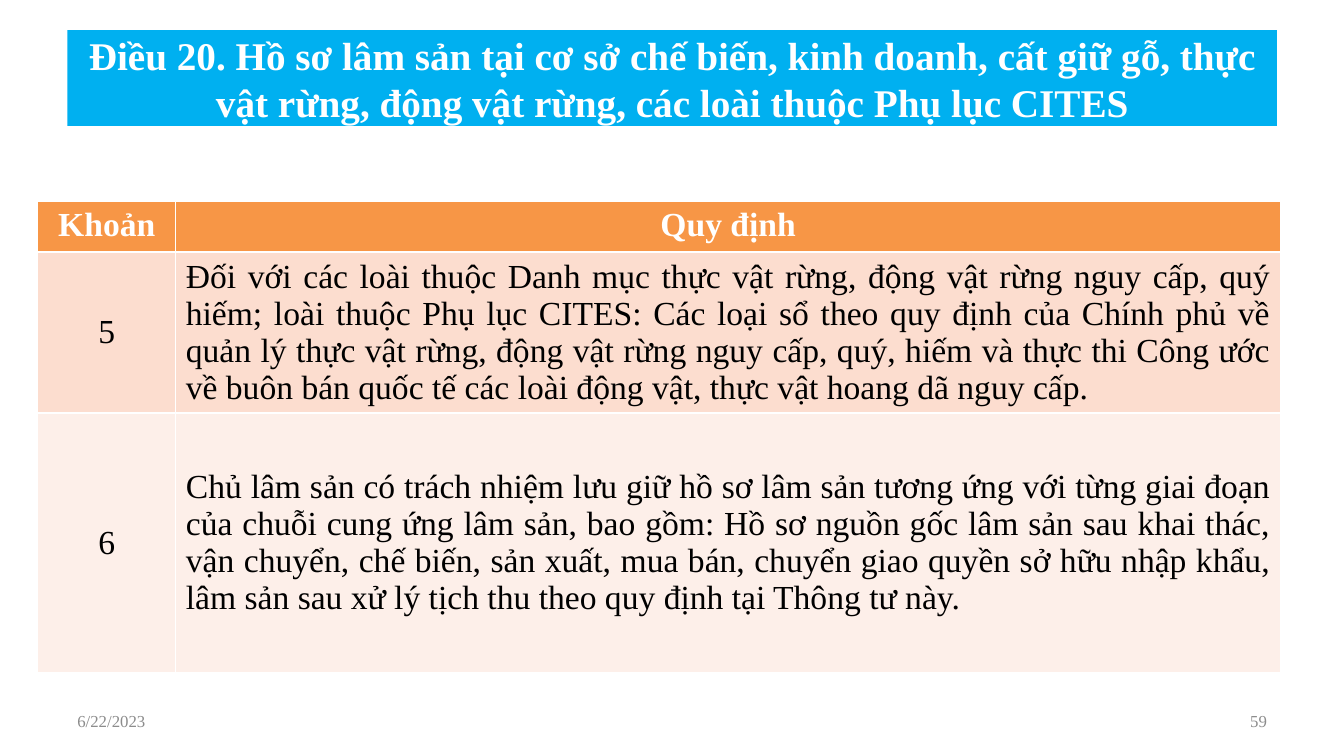
from typing import NamedTuple

from pptx import Presentation
from pptx import util as u
from pptx.dml.color import RGBColor
from pptx.enum import text

FONT = "Times New Roman"
WHITE = RGBColor(0xFF, 0xFF, 0xFF)
BLACK = RGBColor(0x00, 0x00, 0x00)
GREY = RGBColor(0x8C, 0x8C, 0x8C)
BLUE = RGBColor(0x00, 0xB0, 0xF0)
ORANGE = RGBColor(0xF7, 0x96, 0x46)
PEACH = RGBColor(0xFC, 0xDD, 0xCF)
PALE_PEACH = RGBColor(0xFD, 0xEF, 0xE9)

LEFT, CENTER, RIGHT, JUSTIFY = (
    text.PP_ALIGN.LEFT, text.PP_ALIGN.CENTER, text.PP_ALIGN.RIGHT, text.PP_ALIGN.JUSTIFY)
TOP, MIDDLE = text.MSO_ANCHOR.TOP, text.MSO_ANCHOR.MIDDLE


class Clause(NamedTuple):
    number: str
    rule: str
    height: float
    fill: RGBColor
    color: RGBColor = BLACK
    bold: bool = False
    rule_align: text.PP_ALIGN = JUSTIFY
    anchor: text.MSO_ANCHOR = MIDDLE


class FooterItem(NamedTuple):
    content: str
    left: float
    align: text.PP_ALIGN


TITLE = ("Điều 20. Hồ sơ lâm sản tại cơ sở chế biến, kinh doanh, cất giữ gỗ, "
         "thực vật rừng, động vật rừng, các loài thuộc Phụ lục CITES")
CLAUSES = [
    Clause("Khoản", "Quy định", 1.27, ORANGE, WHITE, True, CENTER, TOP),
    Clause("5", "Đối với các loài thuộc Danh mục thực vật rừng, động vật rừng nguy cấp, "
           "quý hiếm; loài thuộc Phụ lục CITES: Các loại sổ theo quy định của Chính phủ "
           "về quản lý thực vật rừng, động vật rừng nguy cấp, quý, hiếm và thực thi "
           "Công ước về buôn bán quốc tế các loài động vật, thực vật hoang dã nguy cấp.",
           4.06, PEACH),
    Clause("6", "Chủ lâm sản có trách nhiệm lưu giữ hồ sơ lâm sản tương ứng với từng "
           "giai đoạn của chuỗi cung ứng lâm sản, bao gồm: Hồ sơ nguồn gốc lâm sản sau "
           "khai thác, vận chuyển, chế biến, sản xuất, mua bán, chuyển giao quyền sở hữu "
           "nhập khẩu, lâm sản sau xử lý tịch thu theo quy định tại Thông tư này.",
           6.53, PALE_PEACH),
]
COLUMN_WIDTHS = (3.48, 27.84)
FOOTER = [FooterItem("6/22/2023", 1.7, LEFT), FooterItem("59", 24.28, RIGHT)]


def write(frame, content: str, size: float, color: RGBColor,
          align: text.PP_ALIGN, bold: bool = False) -> None:
    paragraph = frame.paragraphs[0]
    paragraph.alignment = align
    run = paragraph.add_run()
    run.text = content
    run.font.name = FONT
    run.font.size = u.Pt(size)
    run.font.bold = bold
    run.font.color.rgb = color


def add_heading(slide) -> None:
    heading = slide.shapes.title
    heading.left, heading.top = u.Cm(1.7), u.Cm(0.76)
    heading.width, heading.height = u.Cm(30.48), u.Cm(2.41)
    heading.fill.solid()
    heading.fill.fore_color.rgb = BLUE
    frame = heading.text_frame
    frame.auto_size = text.MSO_AUTO_SIZE.NONE
    frame.vertical_anchor = MIDDLE
    write(frame, TITLE, 28, WHITE, CENTER, True)


def add_clauses(slide, clauses: list[Clause]) -> None:
    table = slide.shapes.add_table(
        len(clauses), len(COLUMN_WIDTHS), u.Cm(0.95), u.Cm(5.08),
        u.Cm(sum(COLUMN_WIDTHS)), u.Cm(sum(c.height for c in clauses))).table
    for column, width in zip(table.columns, COLUMN_WIDTHS):
        column.width = u.Cm(width)
    for row, clause in zip(table.rows, clauses):
        row.height = u.Cm(clause.height)
        contents = ((clause.number, CENTER), (clause.rule, clause.rule_align))
        for cell, (content, align) in zip(row.cells, contents):
            cell.fill.solid()
            cell.fill.fore_color.rgb = clause.fill
            cell.vertical_anchor = clause.anchor
            write(cell.text_frame, content, 24, clause.color, align, clause.bold)


def add_footer(slide, item: FooterItem) -> None:
    frame = slide.shapes.add_textbox(
        u.Cm(item.left), u.Cm(17.65), u.Cm(7.9), u.Cm(1.02)).text_frame
    frame.word_wrap = True
    frame.vertical_anchor = MIDDLE
    write(frame, item.content, 12, GREY, item.align)


def main() -> None:
    deck = Presentation()
    deck.slide_width, deck.slide_height = u.Cm(33.87), u.Cm(19.05)
    slide = deck.slides.add_slide(deck.slide_layouts[5])  # title only

    # Heading band
    add_heading(slide)

    # Table of clauses
    add_clauses(slide, CLAUSES)

    # Date and slide number
    for item in FOOTER:
        add_footer(slide, item)

    deck.save("out.pptx")


if __name__ == "__main__":
    main()
